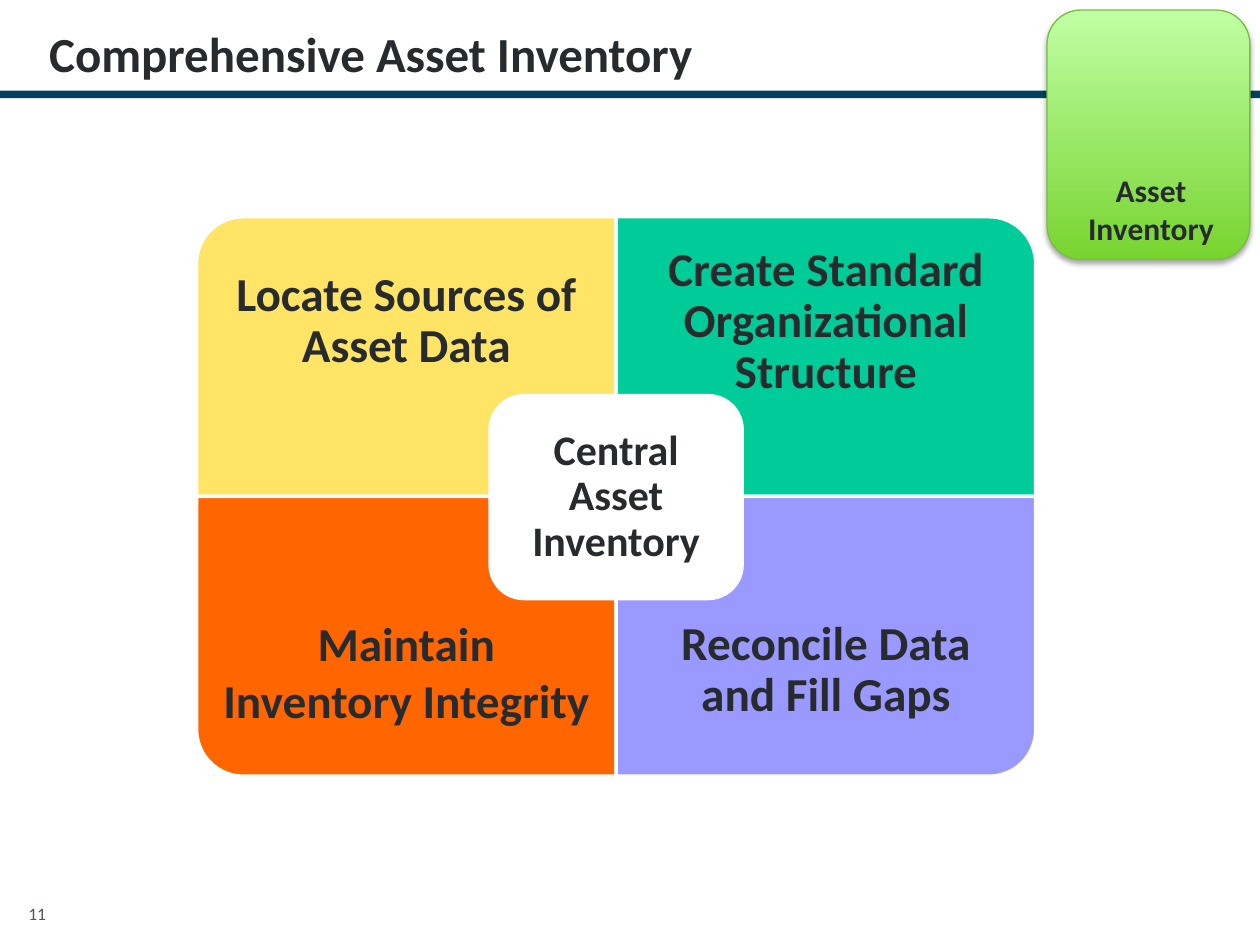
from dataclasses import dataclass

from lxml import etree
from pptx import Presentation
from pptx import util as u
from pptx.dml.color import RGBColor
from pptx.enum import shapes, text
from pptx.oxml import ns


@dataclass(frozen=True)
class Theme:
    font: str = "Calibri"
    ink: str = "282B2E"
    muted: str = "50565C"
    rule: str = "00425D"
    white: str = "FFFFFF"
    yellow: str = "FFE466"
    green: str = "00CC99"
    orange: str = "FF6600"
    violet: str = "9999FF"
    badge_low: str = "78D430"
    badge_high: str = "C0FFA4"
    badge_line: str = "77C03E"
    shadow: str = "000000"
    title_size: int = 28
    tile_size: int = 27
    hub_size: int = 24
    badge_size: int = 18
    number_size: int = 10


class SlideBuilder:
    def __init__(self, slide, theme):
        self.slide = slide
        self.theme = theme

    def style_text(self, frame, words, size, color=None, bold=True, spacing=1.0,
                   align=text.PP_ALIGN.CENTER):
        frame.text = words
        for paragraph in frame.paragraphs:
            paragraph.alignment = align
            paragraph.line_spacing = spacing
            for run in paragraph.runs:
                run.font.name = self.theme.font
                run.font.size = u.Pt(size)
                run.font.bold = bold
                run.font.color.rgb = RGBColor.from_string(color or self.theme.ink)

    def title(self, words, left, top, width, height):
        heading = self.slide.shapes.title
        heading.left, heading.top = u.Inches(left), u.Inches(top)
        heading.width, heading.height = u.Inches(width), u.Inches(height)
        heading.text_frame.vertical_anchor = text.MSO_ANCHOR.MIDDLE
        self.style_text(heading.text_frame, words, self.theme.title_size,
                        spacing=u.Pt(28), align=text.PP_ALIGN.LEFT)

    def label(self, words, box, size, inset=None, wrap=True, **style):
        caption = self.slide.shapes.add_textbox(*map(u.Inches, box))
        frame = caption.text_frame
        frame.word_wrap = wrap
        if inset is not None:
            frame.vertical_anchor = text.MSO_ANCHOR.MIDDLE
            frame.margin_left = frame.margin_right = u.Inches(inset)
            frame.margin_top = frame.margin_bottom = u.Inches(inset)
        self.style_text(frame, words, size, **style)

    def panel(self, kind, box, fill=None, line=None, weight=2, rotation=0):
        panel = self.slide.shapes.add_shape(kind, *map(u.Inches, box))
        panel.shadow.inherit = False
        panel.rotation = rotation
        if fill:
            panel.fill.solid()
            panel.fill.fore_color.rgb = RGBColor.from_string(fill)
        if line:
            panel.line.color.rgb = RGBColor.from_string(line)
            panel.line.width = u.Pt(weight)
        else:
            panel.line.fill.background()
        return panel

    def tile(self, fill, left, top, width, height, rotation):
        if rotation % 180:
            box = (left + (width - height) / 2, top + (height - width) / 2,
                   height, width)
        else:
            box = (left, top, width, height)
        self.panel(shapes.MSO_SHAPE.ROUND_1_RECTANGLE, box, fill,
                   self.theme.white, rotation=rotation)

    def badge(self, words, left, top, width, height):
        theme = self.theme
        badge = self.panel(shapes.MSO_SHAPE.ROUNDED_RECTANGLE,
                           (left, top, width, height),
                           line=theme.badge_line, weight=0.75)
        badge.fill.gradient()
        badge.fill.gradient_angle = 90
        for stop, color in zip(badge.fill.gradient_stops,
                               (theme.badge_low, theme.badge_high)):
            stop.color.rgb = RGBColor.from_string(color)
        effects = badge._element.spPr.find(ns.qn("a:effectLst"))
        shadow = etree.SubElement(effects, ns.qn("a:outerShdw"),
                                  blurRad=str(u.Pt(3.1)), dist=str(u.Pt(1.8)),
                                  dir="5400000", rotWithShape="0")
        tint = etree.SubElement(shadow, ns.qn("a:srgbClr"), val=theme.shadow)
        etree.SubElement(tint, ns.qn("a:alpha"), val="35000")
        self.label(words, (left + 0.22, top + 1.23, 1.21, 0.71),
                   theme.badge_size, wrap=False)


def main():
    theme = Theme()
    deck = Presentation()
    deck.slide_width, deck.slide_height = u.Inches(10), u.Inches(7.5)
    page = SlideBuilder(deck.slides.add_slide(deck.slide_layouts[5]), theme)

    page.panel(shapes.MSO_SHAPE.RECTANGLE, (0, 0.72, 10, 0.06), theme.rule)
    page.label("11", (0.05, 7.14, 0.49, 0.26), theme.number_size,
               color=theme.muted, bold=False, spacing=0.9)
    page.title("Comprehensive Asset Inventory", 0.29, 0, 5.63, 0.92)
    page.badge("Asset\nInventory", 8.31, 0.08, 1.61, 1.98)

    left, top, width, height, label_height = 1.56, 1.72, 3.33, 2.22, 1.67
    steps = [
        ("Locate Sources of Asset Data", theme.yellow, 270, 0.9),
        ("Create Standard Organizational Structure", theme.green, 0, 0.9),
        ("Maintain Inventory Integrity", theme.orange, 180, 1.0),
        ("Reconcile Data and Fill Gaps", theme.violet, 90, 0.9),
    ]
    for index, (step, fill, rotation, spacing) in enumerate(steps):
        row, column = divmod(index, 2)
        x, y = left + column * width, top + row * height
        page.tile(fill, x, y, width, height, rotation)
        label_top = y + row * (height - label_height)
        page.label(step, (x, label_top, width, label_height), theme.tile_size,
                   inset=0.21, spacing=spacing)

    page.panel(shapes.MSO_SHAPE.ROUNDED_RECTANGLE, (3.89, 3.14, 2, 1.61),
               theme.white, theme.white)
    page.label("Central Asset Inventory", (3.97, 3.22, 1.84, 1.45),
               theme.hub_size, inset=0.1, spacing=0.9)
    deck.save("out.pptx")


if __name__ == "__main__":
    main()
